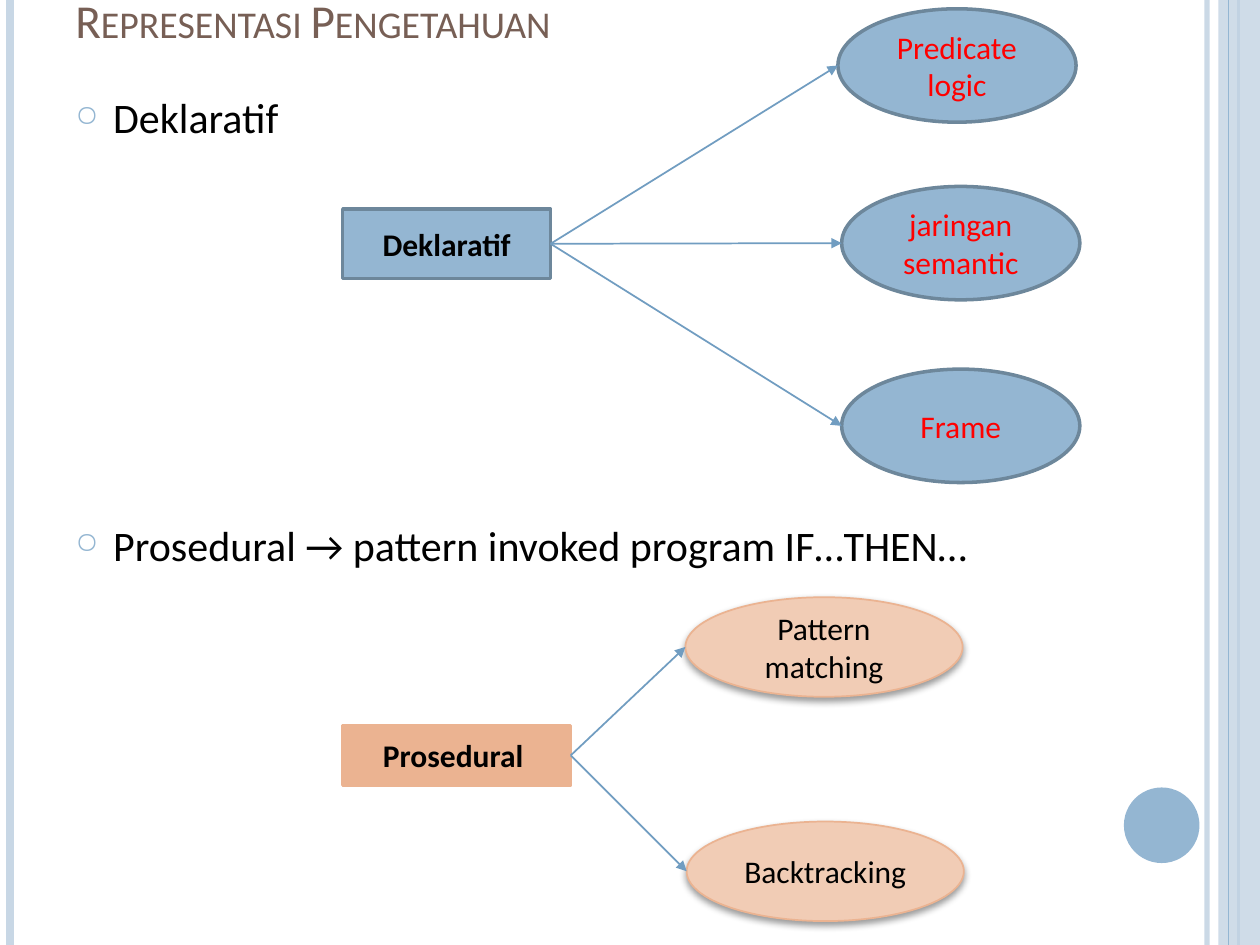
from lxml import etree
from pptx import Presentation
from pptx.dml.color import RGBColor
from pptx.enum import shapes, text
from pptx.oxml import ns
from pptx.util import Inches, Pt

BLUE = RGBColor(0x94, 0xB6, 0xD2)
PALE_BLUE = RGBColor(0xC8, 0xD7, 0xE5)
EDGE_BLUE = RGBColor(0x6D, 0x87, 0x9B)
ARROW_BLUE = RGBColor(0x71, 0x9D, 0xC1)
ORANGE = RGBColor(0xEB, 0xB3, 0x91)
PALE_ORANGE = RGBColor(0xF1, 0xCC, 0xB5)
BROWN = RGBColor(0x77, 0x5F, 0x55)
BLACK = RGBColor(0, 0, 0)
RED = RGBColor(0xFF, 0, 0)

RECTANGLE = shapes.MSO_SHAPE.RECTANGLE
OVAL = shapes.MSO_SHAPE.OVAL

TITLE = "Representasi Pengetahuan"
BULLETS = [("Deklaratif", 6), ("Prosedural → pattern invoked program IF…THEN…", 215.5)]
RULES = [(9.58, PALE_BLUE, 3, 93), (0.08, PALE_BLUE, 4.5, 100), (9.83, BLUE, 1.5, 100)]
THIN_RULE = (9.75, BLUE, 0.75, 100)
DIAGRAMS = [
    {
        "root": ("Deklaratif", (2.72, 1.66, 1.65, 0.55), BLUE, EDGE_BLUE),
        "leaves": [("Predicate logic", 6.65, 0.07), ("jaringan semantic", 6.68, 1.48),
                   ("Frame", 6.68, 2.93)],
        "leaf_size": (1.89, 0.9),
        "leaf_style": {"fill": BLUE, "line": EDGE_BLUE, "width": 2},
        "leaf_color": RED,
    },
    {
        "root": ("Prosedural ", (2.72, 5.76, 1.81, 0.47), ORANGE, ORANGE),
        "leaves": [("Pattern matching", 5.44, 4.74), ("Backtracking", 5.45, 6.52)],
        "leaf_size": (2.2, 0.79),
        "leaf_style": {"fill": PALE_ORANGE, "line": ORANGE, "width": 1, "shadow": True},
        "leaf_color": BLACK,
    },
]

presentation = Presentation()
presentation.slide_width, presentation.slide_height = Inches(10), Inches(7.5)
slide = presentation.slides.add_slide(presentation.slide_layouts[6])


def add_child(parent, tag, **attributes):
    child = etree.SubElement(parent, ns.qn(tag))
    for name, value in attributes.items():
        child.set(name, str(value))
    return child


def set_alpha(element, percent):
    if percent < 100:
        add_child(next(element.iter(ns.qn("a:srgbClr"))), "a:alpha", val=percent * 1000)


def write(paragraph, content, size=18, color=BLACK, bold=False, small_caps=False,
          align=text.PP_ALIGN.LEFT):
    paragraph.alignment = align
    run = paragraph.add_run()
    run.text = content
    run.font.name, run.font.size, run.font.bold = "Calibri", Pt(size), bold
    run.font.color.rgb = color
    if small_caps:
        run.font._element.set("cap", "small")


def add_text_frame(box, anchor):
    frame = slide.shapes.add_textbox(*map(Inches, box)).text_frame
    frame.word_wrap, frame.vertical_anchor = True, anchor
    return frame


def add_bullet(paragraph):
    properties = paragraph._p.get_or_add_pPr()
    properties.set("marL", str(Inches(0.3)))
    properties.set("indent", str(-Inches(0.3)))
    add_child(add_child(properties, "a:buClr"), "a:srgbClr", val=BLUE)
    add_child(properties, "a:buSzPct", val=70000)
    add_child(properties, "a:buChar", char="○")


def add_line(start, end, color, width, alpha=100, arrow=False):
    connector = slide.shapes.add_connector(
        shapes.MSO_CONNECTOR.STRAIGHT, *map(Inches, start + end))
    connector.line.color.rgb, connector.line.width = color, Pt(width)
    outline = connector.line._get_or_add_ln()
    set_alpha(outline, alpha)
    if arrow:
        add_child(outline, "a:tailEnd", type="triangle")
    add_child(connector._element.spPr, "a:effectLst")


def add_shape(kind, box, fill, line=None, width=1, alpha=100, shadow=False):
    shape = slide.shapes.add_shape(kind, *map(Inches, box))
    shape.shadow.inherit = False
    shape.fill.solid()
    shape.fill.fore_color.rgb = fill
    set_alpha(shape._element.spPr, alpha)
    if line is None:
        shape.line.fill.background()
    else:
        shape.line.color.rgb, shape.line.width = line, Pt(width)
    if shadow:
        effects = shape._element.spPr.find(ns.qn("a:effectLst"))
        outer = add_child(effects, "a:outerShdw", blurRad=Pt(4), dist=Pt(2), dir=90 * 60000)
        color = add_child(outer, "a:srgbClr", val=BLACK)
        add_child(color, "a:alpha", val=40000)
    return shape


def add_node(kind, box, label, style, **font):
    frame = add_shape(kind, box, **style).text_frame
    frame.word_wrap, frame.vertical_anchor = True, text.MSO_ANCHOR.MIDDLE
    write(frame.paragraphs[0], label, align=text.PP_ALIGN.CENTER, **font)


def add_rule(x, color, width, alpha):
    add_line((x, 0), (x, 7.5), color, width, alpha)


def add_diagram(diagram):
    label, box, fill, line = diagram["root"]
    add_node(RECTANGLE, box, label, {"fill": fill, "line": line, "width": 2}, bold=True)
    left, top, width, height = box
    start = (left + width, top + height / 2)
    leaf_size = diagram["leaf_size"]
    for label, x, y in diagram["leaves"]:
        add_node(OVAL, (x, y) + leaf_size, label, diagram["leaf_style"],
                 color=diagram["leaf_color"])
        add_line(start, (x, y + leaf_size[1] / 2), ARROW_BLUE, 1, arrow=True)


for rule in RULES:
    add_rule(*rule)
add_shape(RECTANGLE, (9.67, 0, 0.33, 7.5), PALE_BLUE, alpha=87)
add_rule(*THIN_RULE)
add_shape(OVAL, (8.92, 6.25, 0.6, 0.6), BLUE)

title_frame = add_text_frame((0.5, 0.05, 8.17, 0.38), text.MSO_ANCHOR.BOTTOM)
write(title_frame.paragraphs[0], TITLE, size=27, color=BROWN, small_caps=True)

body_frame = add_text_frame((0.5, 0.68, 9.11, 6.35), text.MSO_ANCHOR.TOP)
for index, (content, space) in enumerate(BULLETS):
    paragraph = body_frame.add_paragraph() if index else body_frame.paragraphs[0]
    paragraph.space_before = Pt(space)
    add_bullet(paragraph)
    write(paragraph, content, size=24)

for diagram in DIAGRAMS:
    add_diagram(diagram)

presentation.save("out.pptx")
